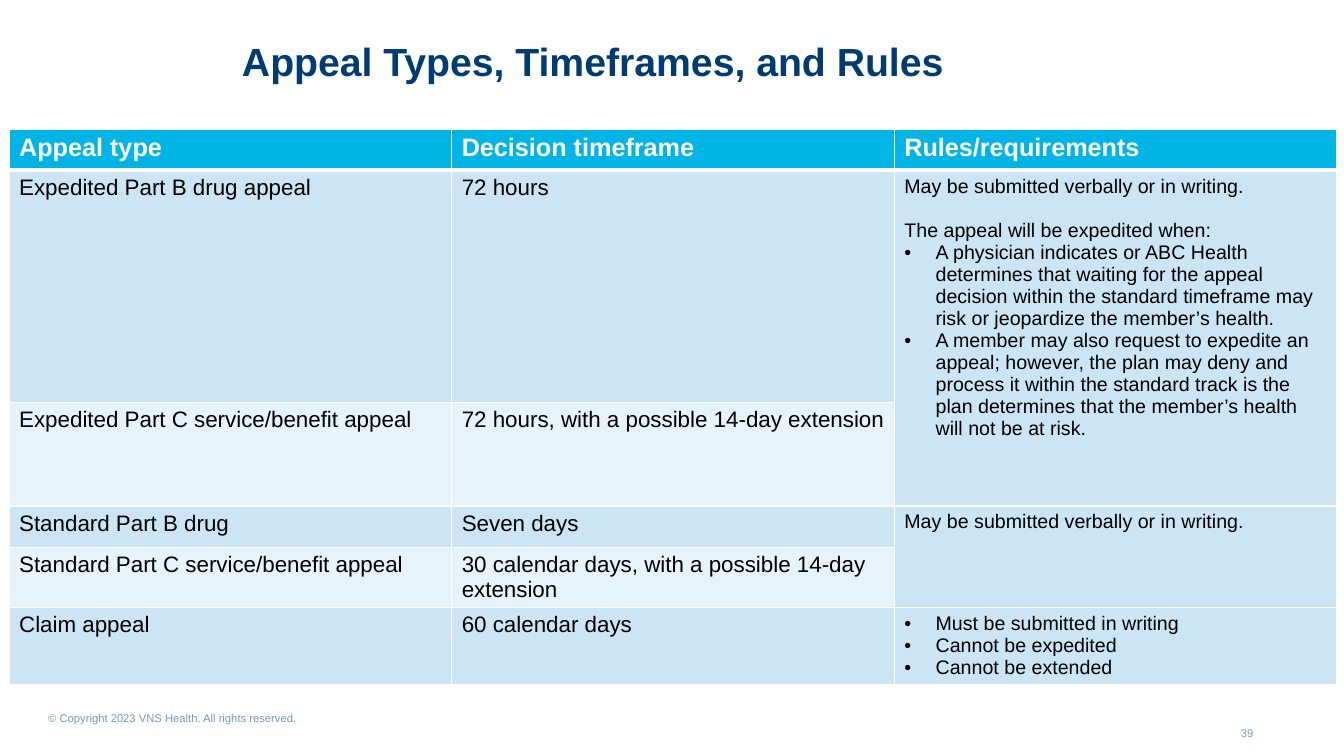
from dataclasses import dataclass

from lxml import etree
from pptx import Presentation
from pptx.dml.color import RGBColor
from pptx.enum.text import MSO_ANCHOR, MSO_AUTO_SIZE, PP_ALIGN
from pptx.oxml.ns import qn
from pptx.util import Inches, Pt

LEFT, CENTER = PP_ALIGN.LEFT, PP_ALIGN.CENTER
MIDDLE, BOTTOM = MSO_ANCHOR.MIDDLE, MSO_ANCHOR.BOTTOM
NO_AUTOFIT = MSO_AUTO_SIZE.NONE
TITLE_ONLY = 5


@dataclass(frozen=True)
class Theme:
    font: str = "Arial"
    navy: str = "003C71"
    muted: str = "739AB6"
    header: str = "00B5E5"
    bands: tuple = ("CCE5F5", "E7F3FA")
    white: str = "FFFFFF"
    black: str = "000000"
    title_size: int = 28
    header_size: int = 18
    cell_size: int = 16
    rule_size: int = 14
    footer_size: int = 8
    thin: int = 1
    thick: int = 3


@dataclass(frozen=True)
class Line:
    """One paragraph of a cell."""
    text: str
    bullet: bool = False
    gap: int = 0


COLUMN_WIDTH = 4.39
ROW_HEIGHTS = [0.41, 2.3, 1.03, 0.41, 0.6, 0.76]
HEADERS = ["Appeal type", "Decision timeframe", "Rules/requirements"]
APPEALS = [
    ("Expedited Part B drug appeal", "72 hours"),
    ("Expedited Part C service/benefit appeal",
     "72 hours, with a possible 14-day extension"),
    ("Standard Part B drug", "Seven days"),
    ("Standard Part C service/benefit appeal",
     "30 calendar days, with a possible 14-day extension"),
    ("Claim appeal", "60 calendar days"),
]
VERBAL_OR_WRITTEN = Line("May be submitted verbally or in writing.")
# (first row, last row, lines)
RULES = [
    (1, 2, [
        VERBAL_OR_WRITTEN,
        Line("The appeal will be expedited when:", gap=16),
        Line("A physician indicates or ABC Health determines that waiting for "
             "the appeal decision within the standard timeframe may risk or "
             "jeopardize the member’s health.", bullet=True),
        Line("A member may also request to expedite an appeal; however, the "
             "plan may deny and process it within the standard track is the "
             "plan determines that the member’s health will not be at risk.",
             bullet=True),
    ]),
    (3, 4, [VERBAL_OR_WRITTEN]),
    (5, 5, [Line("Must be submitted in writing", bullet=True),
            Line("Cannot be expedited", bullet=True),
            Line("Cannot be extended", bullet=True)]),
]


class SlideBuilder:
    def __init__(self, slide, theme):
        self.slide = slide
        self.theme = theme

    def fill_text(self, frame, lines, size, color, bold=False, align=LEFT):
        for index, line in enumerate(lines):
            para = frame.paragraphs[0] if index == 0 else frame.add_paragraph()
            para.alignment = align
            if line.gap:
                para.space_before = Pt(line.gap)
            if line.bullet:
                self.add_bullet(para)
            span = para.add_run()
            span.text = line.text
            formats = {"name": self.theme.font, "size": Pt(size), "bold": bold}
            for name, value in formats.items():
                setattr(span.font, name, value)
            span.font.color.rgb = RGBColor.from_string(color)

    def add_bullet(self, para):
        properties = para._p.get_or_add_pPr()
        properties.set("marL", str(Inches(0.31)))
        properties.set("indent", str(-Inches(0.31)))
        etree.SubElement(properties, qn("a:buFont"), typeface=self.theme.font)
        etree.SubElement(properties, qn("a:buChar"), char="•")

    def set_frame(self, frame, anchor, margin_x=0, margin_y=0):
        formats = {
            "word_wrap": True, "auto_size": NO_AUTOFIT, "vertical_anchor": anchor,
            "margin_left": Inches(margin_x), "margin_right": Inches(margin_x),
            "margin_top": Inches(margin_y), "margin_bottom": Inches(margin_y),
        }
        for name, value in formats.items():
            setattr(frame, name, value)

    def add_title(self, text, left, top, width, height):
        title = self.slide.shapes.title
        place = {"left": left, "top": top, "width": width, "height": height}
        for name, value in place.items():
            setattr(title, name, Inches(value))
        self.set_frame(title.text_frame, BOTTOM)
        self.fill_text(title.text_frame, [Line(text)], self.theme.title_size,
                       self.theme.navy, bold=True)

    def add_footer(self, text, place, align=LEFT, margins=(0, 0)):
        box = self.slide.shapes.add_textbox(*map(Inches, place))
        self.set_frame(box.text_frame, MIDDLE, *margins)
        self.fill_text(box.text_frame, [Line(text)], self.theme.footer_size,
                       self.theme.muted, align=align)

    def style_cell(self, cell, row):
        """Give a cell its white borders and the fill of its row."""
        theme = self.theme
        widths = {"lnL": theme.thin, "lnR": theme.thin,
                  "lnT": theme.thick if row == 1 else theme.thin,
                  "lnB": theme.thick if row == 0 else theme.thin}
        properties = cell._tc.get_or_add_tcPr()
        for side, width in widths.items():
            border = etree.SubElement(properties, qn(f"a:{side}"), w=str(Pt(width)))
            fill = etree.SubElement(border, qn("a:solidFill"))
            etree.SubElement(fill, qn("a:srgbClr"), val=theme.white)
        color = theme.header if row == 0 else theme.bands[(row - 1) % 2]
        cell.fill.solid()
        cell.fill.fore_color.rgb = RGBColor.from_string(color)

    def add_appeal_table(self, left, top):
        theme = self.theme
        size = (COLUMN_WIDTH * len(HEADERS), sum(ROW_HEIGHTS))
        table = self.slide.shapes.add_table(
            len(ROW_HEIGHTS), len(HEADERS),
            *map(Inches, (left, top, *size))).table
        for column in table.columns:
            column.width = Inches(COLUMN_WIDTH)
        for row, height in enumerate(ROW_HEIGHTS):
            table.rows[row].height = Inches(height)
            for column in range(len(HEADERS)):
                self.style_cell(table.cell(row, column), row)
        for column, text in enumerate(HEADERS):
            self.fill_text(table.cell(0, column).text_frame, [Line(text)],
                           theme.header_size, theme.white, bold=True)
        for row, texts in enumerate(APPEALS, start=1):
            for column, text in enumerate(texts):
                self.fill_text(table.cell(row, column).text_frame, [Line(text)],
                               theme.cell_size, theme.black)
        for first, last, lines in RULES:
            cell = table.cell(first, 2)
            if last > first:
                cell.merge(table.cell(last, 2))
            self.fill_text(cell.text_frame, lines, theme.rule_size, theme.black)


def main():
    deck = Presentation()
    deck.slide_width, deck.slide_height = Inches(13.33), Inches(7.5)
    page = deck.slides.add_slide(deck.slide_layouts[TITLE_ONLY])
    builder = SlideBuilder(page, Theme())
    builder.add_title("Appeal Types, Timeframes, and Rules", 2.4, 0.31, 10.09, 0.53)
    builder.add_footer("© Copyright 2023 VNS Health. All rights reserved.",
                       (0.38, 6.99, 2.74, 0.27), margins=(0.1, 0.05))
    builder.add_footer("39", (11.91, 7.04, 0.92, 0.46), align=CENTER)
    builder.add_appeal_table(0.09, 1.28)
    deck.save("out.pptx")


if __name__ == "__main__":
    main()
